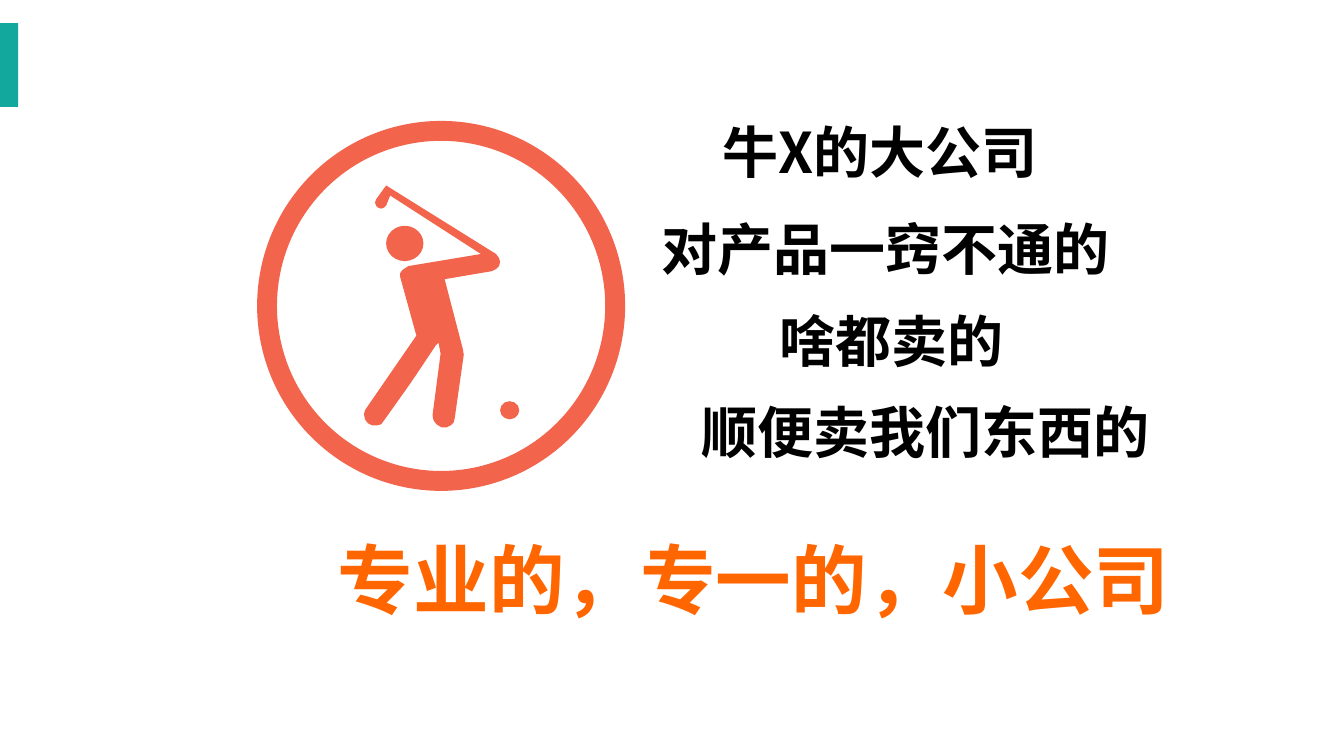
import lxml.etree
import pptx
import pptx.dml.color
import pptx.enum.shapes
import pptx.enum.text
import pptx.oxml.ns
import pptx.util

CELL = pptx.util.Inches(0.1)  # the slide is a grid of 133.3 columns by 75 rows
FONT = "Noto Sans CJK SC"
COLORS = {"tab": "12A89D", "golfer": "F2644C", "customer": "000000", "company": "FF6600"}
SHAPES = pptx.enum.shapes.MSO_SHAPE


def paint(shape, color):
    shape.fill.solid()
    shape.fill.fore_color.rgb = pptx.dml.color.RGBColor.from_string(COLORS[color])
    shape.line.fill.background()
    shape.shadow.inherit = False


def write(holder, text, size, color):
    """Fill a text holder with one bold centred line."""
    frame = holder.text_frame
    frame.text = text
    frame.word_wrap = True
    frame.vertical_anchor = pptx.enum.text.MSO_ANCHOR.MIDDLE
    frame.auto_size = pptx.enum.text.MSO_AUTO_SIZE.SHAPE_TO_FIT_TEXT
    line = frame.paragraphs[0]
    line.alignment = pptx.enum.text.PP_ALIGN.CENTER
    font = line.runs[0].font
    font.size = pptx.util.Pt(size)
    font.bold = True
    font.name = FONT
    font.color.rgb = pptx.dml.color.RGBColor.from_string(COLORS[color])
    lxml.etree.SubElement(line.runs[0]._r.get_or_add_rPr(),
                          pptx.oxml.ns.qn("a:ea"), typeface=FONT)


deck = pptx.Presentation()
deck.slide_width = int(133.3 * CELL)
deck.slide_height = 75 * CELL
slide = deck.slides.add_slide(deck.slide_layouts[5])

# Edge tab, ring, and the golfer's head and ball: column, row, columns, rows
discs = [
    (SHAPES.RECTANGLE, "tab", (0, 2.3, 1.8, 8.3)),
    (SHAPES.DONUT, "golfer", (25.5, 12, 36.5, 36.7)),
    (SHAPES.OVAL, "golfer", (38.3, 22.4, 3.7, 3.5)),
    (SHAPES.OVAL, "golfer", (49.6, 39.8, 1.9, 1.8)),
]
for preset, color, box in discs:
    part = slide.shapes.add_shape(preset, *(int(n * CELL) for n in box))
    paint(part, color)
    if preset == SHAPES.DONUT:
        part.adjustments[0] = 0.054

# Golfer's outline, in tenths of a cell
club_and_hands = [(383, 184), (492, 252), (495, 256), (496, 260), (495, 264),
                  (492, 267), (488, 269), (441, 277)]
right_leg = [(459, 346), (460, 352), (451, 415), (450, 419), (447, 422), (443, 424),
             (438, 424), (433, 421), (430, 417), (429, 412), (437, 351), (435, 340)]
left_leg = [(432, 343), (426, 352), (408, 379), (381, 417), (378, 421), (374, 422),
            (369, 422), (365, 420), (362, 416), (361, 411), (362, 407), (413, 333)]
arm_and_shoulder = [(397, 275), (397, 271), (399, 268), (402, 266), (405, 264), (477, 252)]
club_head = [(387, 194), (383, 204), (381, 206), (378, 207), (375, 206), (373, 204),
             (372, 201), (373, 198)]
outline = club_and_hands + right_leg + left_leg + arm_and_shoulder + club_head
golfer = slide.shapes.build_freeform(*outline[0], scale=CELL / 10)
golfer.add_line_segments(outline[1:], close=True)
paint(golfer.convert_to_shape(), "golfer")

# Kinds of customer: text, column, row, columns
customers = [
    ("牛X的大公司", 60, 11.1, 54.6),
    ("对产品一窍不通的", 51.4, 20.8, 72.8),
    ("啥都卖的", 61.1, 29.9, 54.6),
    ("顺便卖我们东西的", 60, 38.9, 63.6),
]
for text, column, row, columns in customers:
    customer = slide.shapes.add_textbox(
        *(int(n * CELL) for n in (column, row, columns, 7.7)))
    write(customer, text, 40, "customer")

company = slide.shapes.title
company.left, company.top, company.width, company.height = (
    int(n * CELL) for n in (27.3, 52.3, 94.9, 10.1))
write(company, "专业的，专一的，小公司", 54, "company")

deck.save("out.pptx")
